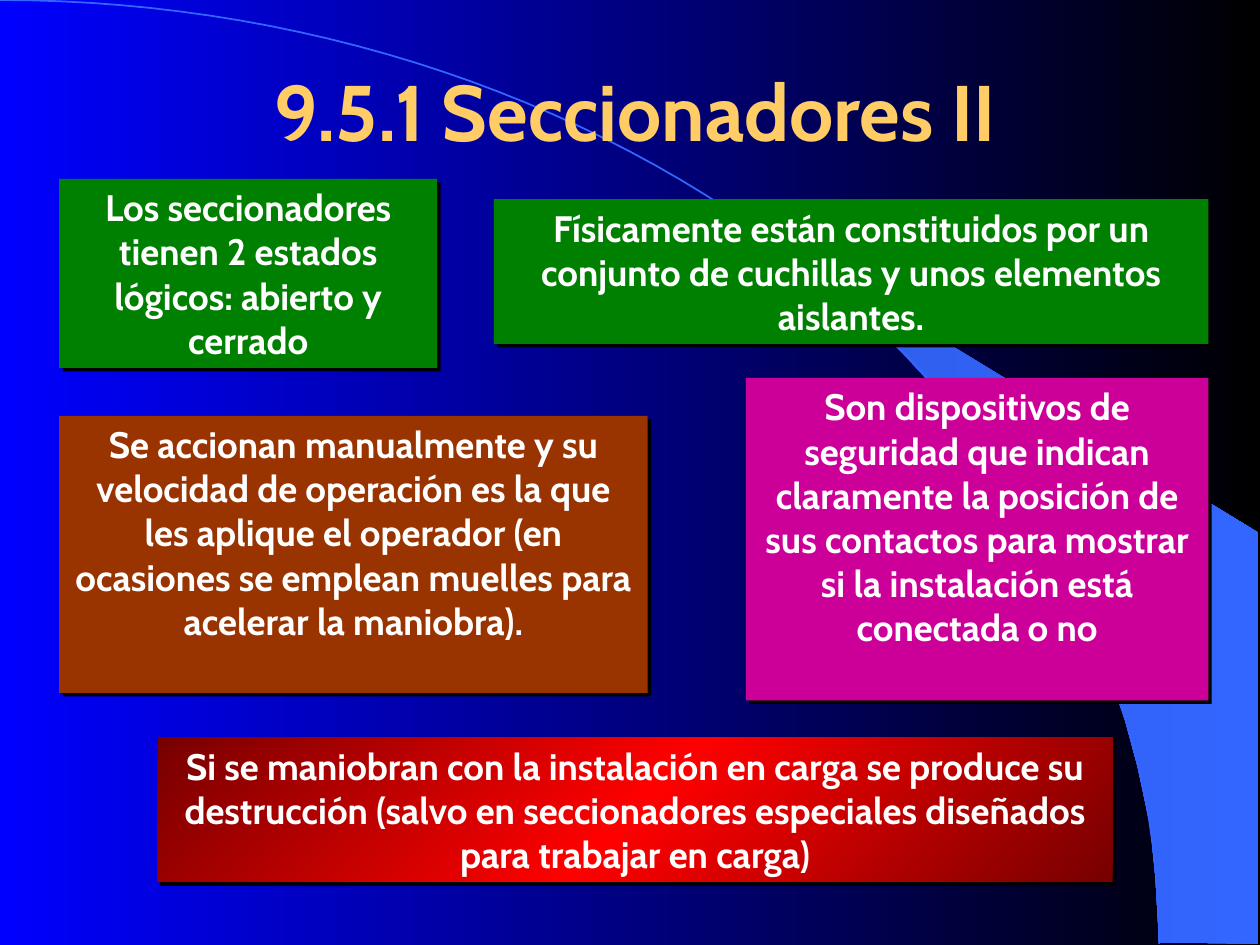
from copy import deepcopy
from math import cos, pi, sin

from lxml.etree import SubElement
from pptx import Presentation
from pptx.dml.color import RGBColor
from pptx.enum.shapes import MSO_SHAPE
from pptx.enum.text import MSO_ANCHOR, PP_ALIGN
from pptx.oxml.ns import qn
from pptx.util import Inches, Pt

WEDGE = [
    (9.2, 7.48), (9.99, 7.49), (9.99, 4.23), (5.89, 1.73), (6.24, 1.99),
    (6.53, 2.22), (6.85, 2.5), (7.16, 2.8), (7.62, 3.3), (8.03, 3.84),
    (8.32, 4.31), (8.58, 4.79), (8.78, 5.28), (8.93, 5.72), (9.03, 6.09),
    (9.13, 6.56), (9.17, 6.96),
]
STEPS = 60
ARC = [(9.2 * sin(i * pi / 2 / STEPS), 7.49 * (1 - cos(i * pi / 2 / STEPS)))
       for i in range(STEPS + 1)]

GREEN, BROWN, PINK = "008000", "993300", "CC0099"
RED = ["760000", "FF0000", "760000"]
BOXES = [
    (0.47, 1.42, 3, 1.5, GREEN,
     "Los seccionadores tienen 2 estados lógicos: abierto y cerrado"),
    (3.92, 1.58, 5.67, 1.15, GREEN,
     "Físicamente están constituidos por un conjunto de cuchillas y unos "
     "elementos aislantes."),
    (0.47, 3.3, 4.67, 2.2, BROWN,
     "Se accionan manualmente y su velocidad de operación es la que les "
     "aplique el operador (en ocasiones se emplean muelles para acelerar "
     "la maniobra)."),
    (5.92, 3, 3.67, 2.56, PINK,
     "Son dispositivos de seguridad que indican claramente la posición de "
     "sus contactos para mostrar si la instalación está conectada o no"),
    (1.25, 5.85, 7.58, 1.15, RED,
     "Si se maniobran con la instalación en carga se produce su destrucción "
     "(salvo en seccionadores especiales diseñados para trabajar en carga)"),
]


def rgb(code):
    return RGBColor.from_string(code)


def blend(fill, root, colors, angle=0):
    """Spread colors evenly as a gradient; root is the XML holding the fill."""
    fill.gradient()
    fill.gradient_angle = angle
    stops = next(root.iter(qn("a:gsLst")))
    while len(stops) < len(colors):
        stops.append(deepcopy(stops[-1]))
    for i, (stop, color) in enumerate(zip(fill.gradient_stops, colors)):
        stop.position = i / (len(colors) - 1)
        stop.color.rgb = rgb(color)


class Deck:
    font = "Cabin"

    def __init__(self, slide):
        self.slide = slide
        self.shapes = slide.shapes

    def backdrop(self, colors):
        back = self.slide.background
        blend(back.fill, self.slide.element, colors)

    def outline(self, points, close):
        pts = [(Inches(x), Inches(y)) for x, y in points]
        pen = self.shapes.build_freeform(*pts[0])
        pen.add_line_segments(pts[1:], close=close)
        shape = pen.convert_to_shape()
        shape.shadow.inherit = False
        return shape

    def wedge(self, points, colors):
        shape = self.outline(points, True)
        blend(shape.fill, shape.element, colors)
        shape.line.fill.background()

    def arc(self, points, color):
        shape = self.outline(points, False)
        shape.fill.background()
        shape.line.color.rgb = rgb(color)
        shape.line.width = Pt(1)

    def label(self, frame, text, size, color):
        frame.text = text
        frame.word_wrap = True
        para = frame.paragraphs[0]
        para.alignment = PP_ALIGN.CENTER
        font = para.runs[0].font
        font.name, font.size, font.bold = self.font, Pt(size), True
        font.color.rgb = rgb(color)
        return para

    def shade(self, shape):
        """Cast a hard black shadow down and to the right."""
        shape.shadow.inherit = False
        effects = shape.element.spPr.find(qn("a:effectLst"))
        drop = SubElement(effects, qn("a:outerShdw"), dist=str(Pt(2.8)),
                          dir="2700000", algn="ctr", rotWithShape="0")
        SubElement(drop, qn("a:srgbClr"), val="000000")

    def box(self, x, y, w, h, color, text):
        shape = self.shapes.add_shape(
            MSO_SHAPE.RECTANGLE, Inches(x), Inches(y), Inches(w), Inches(h))
        if isinstance(color, list):
            blend(shape.fill, shape.element, color, 315)
        else:
            shape.fill.solid()
            shape.fill.fore_color.rgb = rgb(color)
        shape.line.fill.background()
        self.shade(shape)
        shape.text_frame.vertical_anchor = MSO_ANCHOR.TOP
        para = self.label(shape.text_frame, text, 21, "FFFFFF")
        para.space_before = Pt(6)

    def title(self, text):
        head = self.shapes.title
        head.left, head.top = Inches(0.25), Inches(0.25)
        head.width, head.height = Inches(9.58), Inches(1.25)
        head.text_frame.vertical_anchor = MSO_ANCHOR.MIDDLE
        self.label(head.text_frame, text, 45, "FFCC66")
        head.element.getparent().append(head.element)  # bring to front


def main():
    prs = Presentation()
    prs.slide_width, prs.slide_height = Inches(10), Inches(7.5)
    deck = Deck(prs.slides.add_slide(prs.slide_layouts[5]))
    deck.backdrop(["0000FF", "000000"])
    deck.wedge(WEDGE, ["2E5DE7", "3366FF"])
    deck.arc(ARC, "3366FF")
    for box in BOXES:
        deck.box(*box)
    deck.title("9.5.1 Seccionadores II")
    prs.save("out.pptx")


if __name__ == "__main__":
    main()
